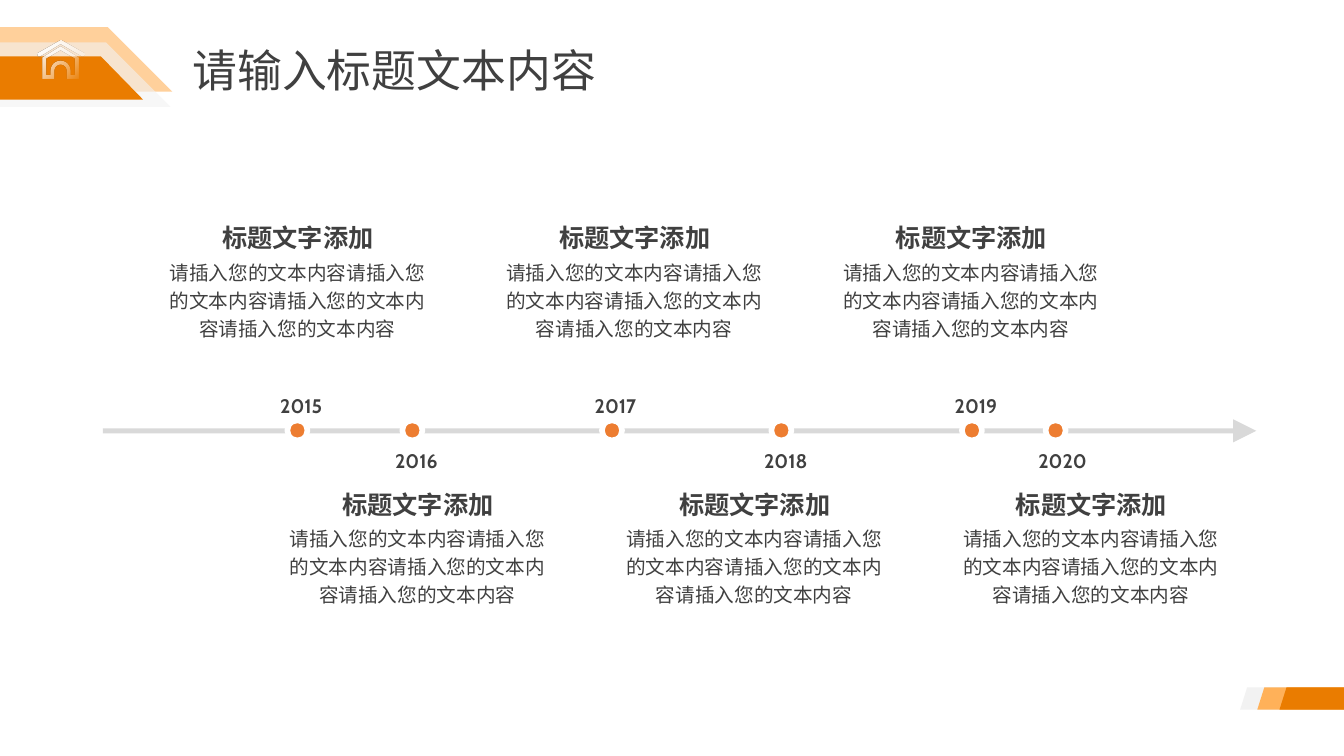
import math
from dataclasses import dataclass

from lxml import etree
from pptx import Presentation
from pptx.dml.color import RGBColor
from pptx.enum import shapes, text
from pptx.oxml import ns
from pptx.util import Inches, Pt


@dataclass(frozen=True)
class Theme:
    orange: str = "EA7C00"
    light_orange: str = "FFB159"
    pale: str = "F2F2F2"
    white: str = "FFFFFF"
    axis: str = "D9D9D9"
    dot: str = "ED7D31"
    ink: str = "404040"
    title_font: str = "Roboto"
    body_font: str = "Cabin"
    title_size: int = 32
    heading_size: int = 18
    body_size: int = 14
    dot_outline: int = 4


THEME = Theme()
TITLE = "请输入标题文本内容"
HEADING = "标题文字添加"
BODY = "请插入您的文本内容" * 4
MILESTONES = [("2015", 2.85), ("2016", 3.99), ("2017", 5.97),
              ("2018", 7.65), ("2019", 9.54), ("2020", 10.37)]
COLUMN_STEP = 3.34


def set_opacity(color_element, percent):
    alpha = etree.SubElement(color_element, ns.qn("a:alpha"))
    alpha.set("val", str(percent * 1000))


def fill_solid(shape, color, opacity=100):
    shape.shadow.inherit = False
    shape.line.fill.background()
    shape.fill.solid()
    shape.fill.fore_color.rgb = RGBColor.from_string(color)
    if opacity < 100:
        set_opacity(shape.element.spPr.find(".//" + ns.qn("a:srgbClr")), opacity)


def add_outline(slide, *contours):
    """Add one freeform whose closed contours are lists of points in inches."""
    builder = None
    for contour in contours:
        start, *others = [(Inches(x), Inches(y)) for x, y in contour]
        if builder is None:
            builder = slide.shapes.build_freeform(*start)
        else:
            builder.move_to(*start)
        builder.add_line_segments(others, close=True)
    return builder.convert_to_shape()


def add_preset(slide, kind, left, top, width, height, color):
    shape = slide.shapes.add_shape(
        kind, Inches(left), Inches(top), Inches(width), Inches(height))
    fill_solid(shape, color)
    return shape


def add_text(slide, content, left, top, width, height, *, size, font=THEME.body_font,
             bold=False, align=None, spacing=None, wrap=True, grow=True):
    box = slide.shapes.add_textbox(
        Inches(left), Inches(top), Inches(width), Inches(height))
    frame = box.text_frame
    frame.word_wrap = wrap
    frame.auto_size = (text.MSO_AUTO_SIZE.SHAPE_TO_FIT_TEXT if grow
                       else text.MSO_AUTO_SIZE.NONE)
    paragraph = frame.paragraphs[0]
    paragraph.alignment = align
    paragraph.line_spacing = spacing
    run = paragraph.add_run()
    run.text = content
    run.font.name = font
    run.font.size = Pt(size)
    run.font.bold = bold
    run.font.color.rgb = RGBColor.from_string(THEME.ink)


def arch(radius, start, end):
    """Return points of the door arch between two angles in degrees."""
    angles = [math.radians(start + (end - start) * i / 12) for i in range(13)]
    return [(0.6 + radius * math.cos(a), 0.7 - radius * math.sin(a)) for a in angles]


def add_house(slide):
    roof = [(0.37, 0.53), (0.6, 0.4), (0.61, 0.4), (0.84, 0.53), (0.84, 0.55),
            (0.82, 0.56), (0.81, 0.56), (0.6, 0.44), (0.4, 0.56), (0.38, 0.56)]
    walls = [(0.42, 0.57), (0.6, 0.46), (0.78, 0.57), (0.78, 0.78), (0.66, 0.78),
             *arch(0.06, 0, 180), (0.54, 0.78), (0.42, 0.78)]
    room = [(0.74, 0.58), (0.6, 0.5), (0.46, 0.58), (0.46, 0.74), (0.5, 0.74),
            *arch(0.1, 180, 0), (0.7, 0.74), (0.74, 0.74)]
    house = add_outline(slide, roof, walls, room)
    house.shadow.inherit = False
    house.line.fill.background()
    house.fill.gradient()
    house.fill.gradient_angle = 315
    for stop, position in zip(house.fill.gradient_stops, (0.1, 1)):
        stop.position = position
        stop.color.rgb = RGBColor.from_string(THEME.white)
    set_opacity(house.element.spPr.findall(".//" + ns.qn("a:srgbClr"))[-1], 0)


def add_header(slide):
    for top, bottom, shoulder, tip, color, opacity in [
            (0.27, 0.91, 1.07, 1.71, THEME.light_orange, 60),
            (0.42, 1.06, 1.05, 1.69, THEME.pale, 60),
            (0.56, 0.99, 1, 1.42, THEME.orange, 100)]:
        band = add_outline(
            slide, [(0, top), (shoulder, top), (tip, bottom), (0, bottom)])
        fill_solid(band, color, opacity)
    add_text(slide, TITLE, 1.81, 0.37, 4.51, 0.64, size=THEME.title_size,
             font=THEME.title_font, align=text.PP_ALIGN.JUSTIFY)
    add_house(slide)


def add_footer(slide):
    right, top, bottom, slant = 13.33, 6.82, 7.04, 0.07
    for left, color in [(12.3, THEME.pale), (12.47, THEME.light_orange),
                        (12.69, THEME.orange)]:
        stripe = add_outline(slide, [(right, bottom), (left, bottom),
                                     (left + slant, top), (right, top)])
        fill_solid(stripe, color)


def add_axis(slide):
    add_preset(slide, shapes.MSO_SHAPE.RECTANGLE, 1.02, 4.25, 11.35, 0.05, THEME.axis)
    arrow = add_preset(slide, shapes.MSO_SHAPE.ISOSCELES_TRIANGLE,
                       12.23, 4.16, 0.23, 0.23, THEME.axis)
    arrow.rotation = 90


def add_milestone(slide, year, left, year_top):
    dot = add_preset(slide, shapes.MSO_SHAPE.OVAL, left, 4.17, 0.2, 0.2, THEME.dot)
    dot.line.color.rgb = RGBColor.from_string(THEME.white)
    dot.line.width = Pt(THEME.dot_outline)
    add_text(slide, year, left - 0.17, year_top, 0.55, 0.29, size=THEME.body_size,
             bold=True, wrap=False, grow=False)


def add_description(slide, left, top):
    centred = {"align": text.PP_ALIGN.CENTER, "spacing": 1.2}
    add_text(slide, BODY, left, top + 0.39, 2.76, 0.95,
             size=THEME.body_size, **centred)
    add_text(slide, HEADING, left + 0.16, top, 2.45, 0.45,
             size=THEME.heading_size, bold=True, **centred)


def main():
    presentation = Presentation()
    presentation.slide_width = Inches(13.33)
    presentation.slide_height = Inches(7.5)
    slide = presentation.slides.add_slide(presentation.slide_layouts[6])
    add_header(slide)
    add_footer(slide)
    add_axis(slide)
    for index, (year, dot_left) in enumerate(MILESTONES):
        column, below = divmod(index, 2)
        year_top, first_left, top = (4.4, 2.76, 4.74) if below else (3.86, 1.57, 2.1)
        add_milestone(slide, year, dot_left, year_top)
        add_description(slide, first_left + column * COLUMN_STEP, top)
    presentation.save("out.pptx")


if __name__ == "__main__":
    main()
